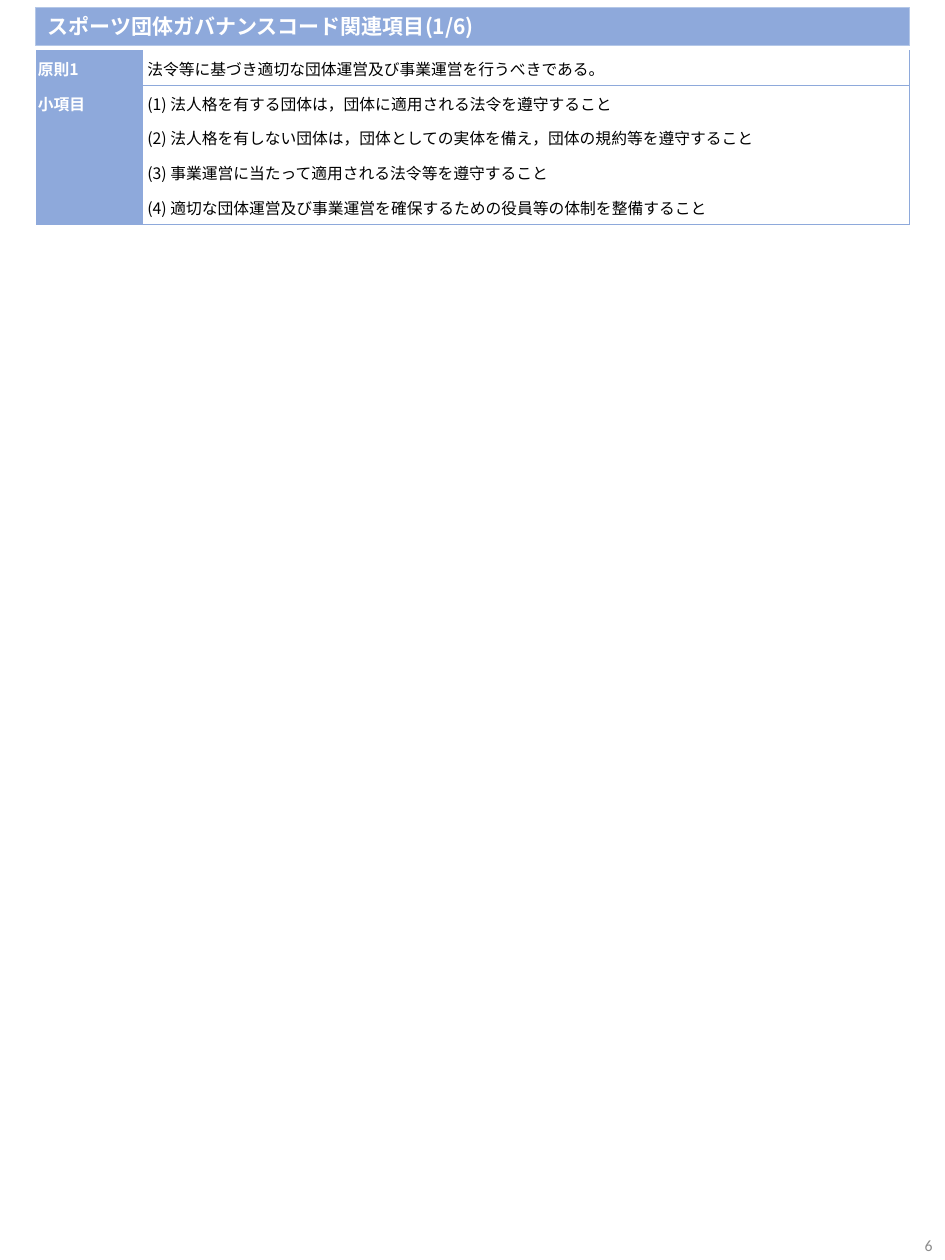
from dataclasses import dataclass

from lxml import etree
from pptx import Presentation
from pptx import util as u
from pptx.dml.color import RGBColor
from pptx.enum import text
from pptx.oxml import ns

BLUE, WHITE, BLACK, GREY = "8EA9DB", "FFFFFF", "000000", "8C8C8C"
JAPANESE = "Noto Sans CJK JP"


@dataclass
class Row:
    label: str
    body: str
    rule_below: bool = False


ROWS = [
    Row("原則1", "法令等に基づき適切な団体運営及び事業運営を行うべきである。", True),
    Row("小項目", "(1) 法人格を有する団体は，団体に適用される法令を遵守すること"),
    Row("", "(2) 法人格を有しない団体は，団体としての実体を備え，団体の規約等を遵守すること"),
    Row("", "(3) 事業運営に当たって適用される法令等を遵守すること"),
    Row("", "(4) 適切な団体運営及び事業運営を確保するための役員等の体制を整備すること", True),
]
COLUMN_WIDTHS = [0.28, 0.28, 0.28, 6.09]
ROW_HEIGHT = 0.276


def colour(value: str) -> RGBColor:
    return RGBColor.from_string(value)


def set_all(target, values: dict) -> None:
    for name, value in values.items():
        setattr(target, name, value)


def write(para, words: str, size: float, hue: str, bold: bool = False, face: str = JAPANESE) -> None:
    span = para.add_run()
    span.text = words
    set_all(span.font, {"size": u.Pt(size), "bold": bold, "name": face})
    span.font.color.rgb = colour(hue)
    east_asian = etree.SubElement(span.font._element, ns.qn("a:ea"))
    east_asian.set("typeface", face)


def set_borders(cell, sides: str) -> None:
    """Rule the named sides (L, R, T, B) and clear the others."""
    properties = cell._tc.get_or_add_tcPr()
    for position, side in enumerate("LRTB"):
        line = etree.Element(ns.qn(f"a:ln{side}"), w=str(u.Pt(0.5)))
        if side in sides:
            fill = etree.SubElement(line, ns.qn("a:solidFill"))
            etree.SubElement(fill, ns.qn("a:srgbClr"), val=BLUE)
        else:
            etree.SubElement(line, ns.qn("a:noFill"))
        properties.insert(position, line)


def format_cell(cell, words: str, fill: str, hue: str, bold: bool, left: float, sides: str) -> None:
    set_all(cell, {
        "margin_left": u.Inches(left), "margin_right": u.Inches(0.01),
        "margin_top": u.Inches(0.01), "margin_bottom": 0,
        "vertical_anchor": text.MSO_ANCHOR.MIDDLE,
    })
    cell.fill.solid()
    cell.fill.fore_color.rgb = colour(fill)
    set_borders(cell, sides)
    para = cell.text_frame.paragraphs[0]
    if words:
        write(para, words, 9, hue, bold)
    else:
        # Keeps an empty cell from stretching its row
        etree.SubElement(para._p, ns.qn("a:endParaRPr"), sz="900")


def add_title(page) -> None:
    title = page.shapes.title
    set_all(title, {"left": u.Inches(0.28), "top": u.Inches(0.06),
                    "width": u.Inches(6.94), "height": u.Inches(0.3)})
    title.fill.solid()
    title.fill.fore_color.rgb = colour(BLUE)
    title.line.color.rgb = colour("B4C7E7")
    title.line.width = u.Pt(0.75)
    frame = title.text_frame
    set_all(frame, {"auto_size": text.MSO_AUTO_SIZE.NONE, "word_wrap": True,
                    "vertical_anchor": text.MSO_ANCHOR.MIDDLE,
                    "margin_top": 0, "margin_bottom": 0})
    para = frame.paragraphs[0]
    para.alignment = text.PP_ALIGN.LEFT
    write(para, "スポーツ団体ガバナンスコード関連項目(1/6)", 12, WHITE, True)


def add_code_table(page) -> None:
    table = page.shapes.add_table(
        len(ROWS), len(COLUMN_WIDTHS), u.Inches(0.29), u.Inches(0.4),
        u.Inches(sum(COLUMN_WIDTHS)), u.Inches(ROW_HEIGHT * len(ROWS))).table
    set_all(table, {"first_row": False, "horz_banding": False})
    for column, width in zip(table.columns, COLUMN_WIDTHS):
        column.width = u.Inches(width)

    body_column = len(COLUMN_WIDTHS) - 1
    for index, row in enumerate(ROWS):
        table.rows[index].height = u.Inches(ROW_HEIGHT)
        for column in range(body_column):
            words = row.label if column == 0 else ""
            format_cell(table.cell(index, column), words, BLUE, WHITE, True, 0.01, "LRTB")
        sides = "LR"
        if row.rule_below:
            sides += "B"
        if index and ROWS[index - 1].rule_below:
            sides += "T"
        format_cell(table.cell(index, body_column), row.body, WHITE, BLACK, False, 0.04, sides)
        if row.label:
            table.cell(index, 0).merge(table.cell(index, 1))


def add_page_number(page) -> None:
    box = page.shapes.add_textbox(u.Inches(6.95), u.Inches(9.68), u.Inches(0.55), u.Inches(0.33))
    set_all(box.text_frame, {"word_wrap": True, "vertical_anchor": text.MSO_ANCHOR.BOTTOM})
    para = box.text_frame.paragraphs[0]
    para.alignment = text.PP_ALIGN.RIGHT
    write(para, "6", 9, GREY, face="Calibri")


def main() -> None:
    deck = Presentation()
    set_all(deck, {"slide_width": u.Inches(7.5), "slide_height": u.Inches(10)})
    page = deck.slides.add_slide(deck.slide_layouts[5])
    add_title(page)
    add_page_number(page)
    add_code_table(page)
    deck.save("out.pptx")


if __name__ == "__main__":
    main()
